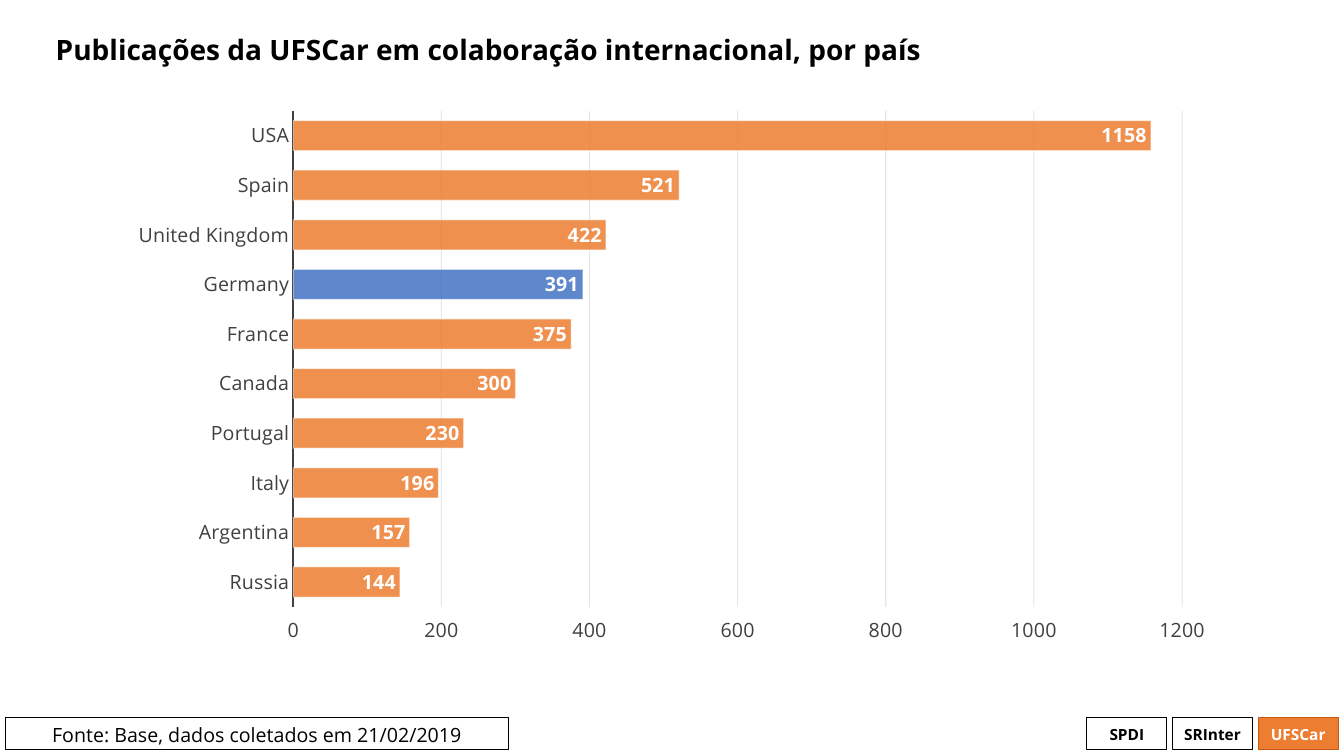
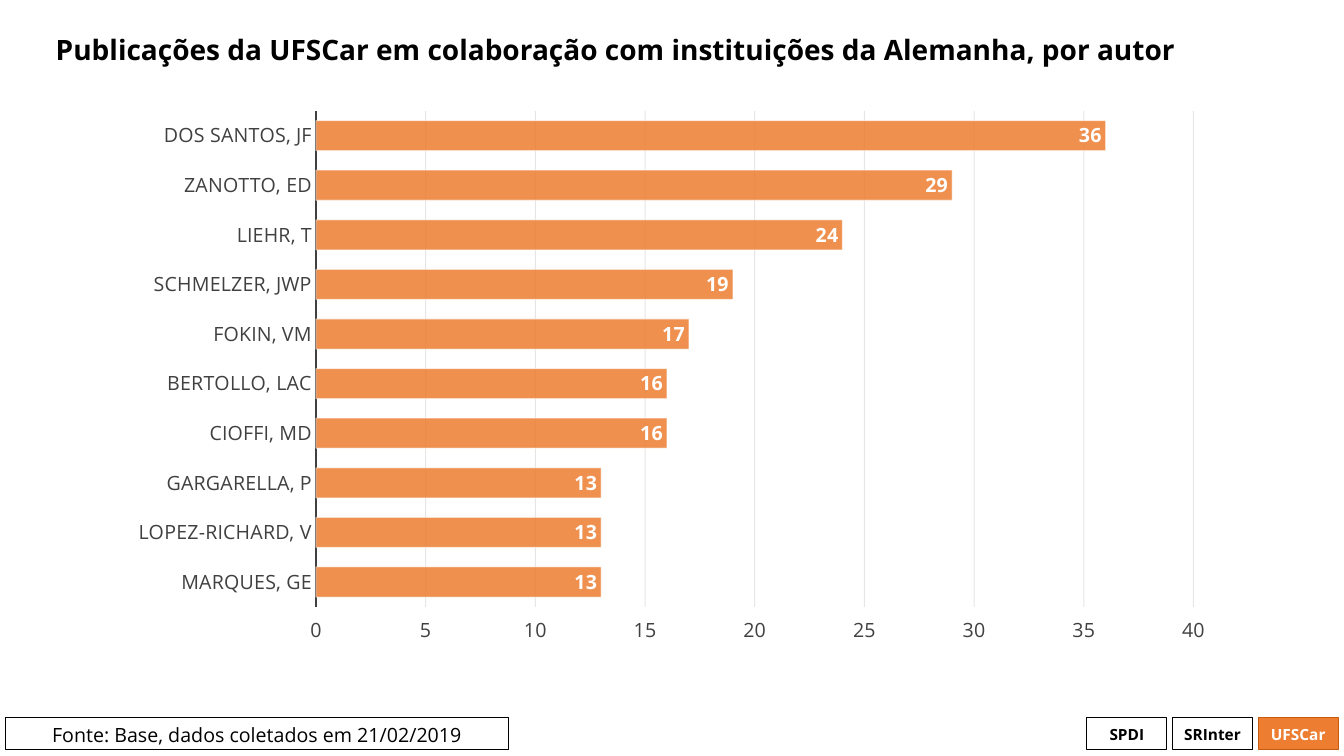
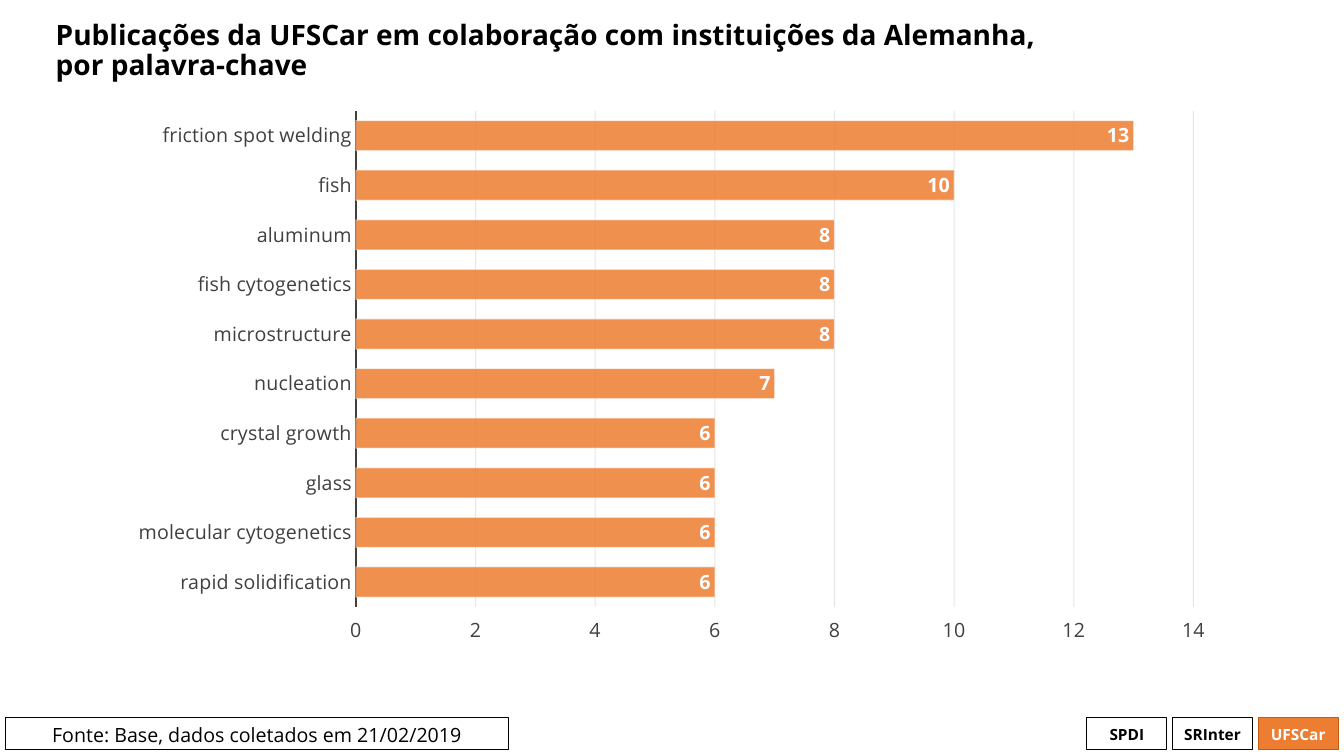
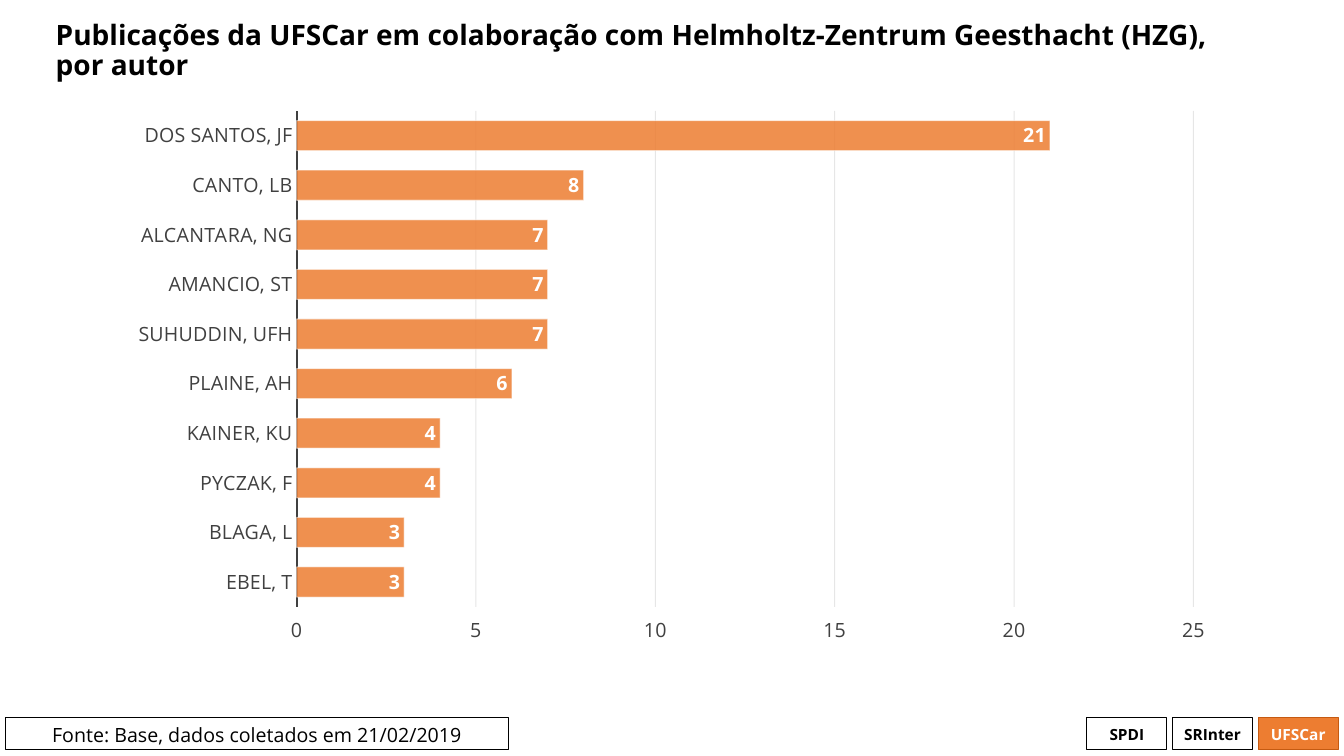
"""Build four bar-chart slides on international co-authorship."""
from dataclasses import dataclass
from typing import Optional

from lxml.etree import SubElement
from pptx import Presentation
from pptx.chart.data import CategoryChartData
from pptx.dml.color import RGBColor
from pptx.dml.chtfmt import ChartFormat
from pptx.enum.chart import XL_CHART_TYPE as ChartType, XL_LABEL_POSITION as LabelPos
from pptx.enum.chart import XL_TICK_LABEL_POSITION as TickLabelPos, XL_TICK_MARK as Tick
from pptx.enum.shapes import MSO_SHAPE as Shape
from pptx.enum.text import MSO_ANCHOR as Anchor, PP_ALIGN as Align
from pptx.oxml.ns import qn
from pptx.slide import Slide
from pptx.text.text import Font, TextFrame
from pptx.util import Inches, Pt

FONT = "Open Sans"
COLORS = {
    "black": "000000", "white": "FFFFFF", "gray": "404040", "grid": "0D0D0D",
    "orange": "ED7D31", "rust": "C55A11", "blue": "4472C4",
}
COLS, ROWS = 160, 90
UNIT = Inches(7.5) / ROWS
FOOTER_TOP, FOOTER_HEIGHT = 85.44, 3.84
BADGE_LEFT, BADGE_WIDTH, BADGE_STEP = 129.4, 9.5, 10.2


@dataclass(frozen=True)
class Area:
    """A rectangle in grid columns and rows."""
    left: float
    top: float
    width: float
    height: float

    def emu(self) -> tuple[int, ...]:
        """Return the rectangle in slide units."""
        return tuple(round(v * UNIT) for v in (self.left, self.top, self.width, self.height))


@dataclass(frozen=True)
class Box:
    """A framed footer label."""
    text: str
    area: Area
    size: float = 11
    bold: bool = True
    anchor: Anchor = Anchor.MIDDLE
    fill: Optional[str] = None
    line: str = "black"
    color: str = "black"


@dataclass(frozen=True)
class Ranking:
    """A title with its ranked values."""
    title: str
    values: dict[str, int]
    maximum: Optional[int] = None
    highlight: Optional[str] = None


def badge_area(i: int) -> Area:
    """Return the place of a badge in the footer row."""
    return Area(BADGE_LEFT + i * BADGE_STEP, FOOTER_TOP, BADGE_WIDTH, FOOTER_HEIGHT)


TITLE_AREA = Area(5.45, 0.7, 148.9, 10.9)
CHART_AREA = Area(13.85, 11.88, 132.24, 66.12)
FOOTER = [
    Box("SPDI", badge_area(0)),
    Box("SRInter", badge_area(1)),
    Box("UFSCar", badge_area(2), fill="orange", line="rust", color="white"),
    Box("Fonte: Base, dados coletados em 21/02/2019",
        Area(0.66, FOOTER_TOP, 59.88, FOOTER_HEIGHT), 14, False, Anchor.TOP),
]

RANKINGS = [
    Ranking("Publicações da UFSCar em colaboração internacional, por país", {
        "USA": 1158, "Spain": 521, "United Kingdom": 422, "Germany": 391, "France": 375,
        "Canada": 300, "Portugal": 230, "Italy": 196, "Argentina": 157, "Russia": 144,
    }, maximum=1200, highlight="Germany"),
    Ranking("Publicações da UFSCar em colaboração com instituições da Alemanha, por autor", {
        "DOS SANTOS, JF": 36, "ZANOTTO, ED": 29, "LIEHR, T": 24, "SCHMELZER, JWP": 19,
        "FOKIN, VM": 17, "BERTOLLO, LAC": 16, "CIOFFI, MD": 16, "GARGARELLA, P": 13,
        "LOPEZ-RICHARD, V": 13, "MARQUES, GE": 13,
    }),
    Ranking("Publicações da UFSCar em colaboração com instituições da Alemanha,\n"
            "por palavra-chave", {
        "friction spot welding": 13, "fish": 10, "aluminum": 8, "fish cytogenetics": 8,
        "microstructure": 8, "nucleation": 7, "crystal growth": 6, "glass": 6,
        "molecular cytogenetics": 6, "rapid solidification": 6,
    }),
    Ranking("Publicações da UFSCar em colaboração com Helmholtz-Zentrum Geesthacht (HZG),\n"
            "por autor", {
        "DOS SANTOS, JF": 21, "CANTO, LB": 8, "ALCANTARA, NG": 7, "AMANCIO, ST": 7,
        "SUHUDDIN, UFH": 7, "PLAINE, AH": 6, "KAINER, KU": 4, "PYCZAK, F": 4,
        "BLAGA, L": 3, "EBEL, T": 3,
    }),
]


def rgb(name: str) -> RGBColor:
    """Return a named colour."""
    return RGBColor.from_string(COLORS[name])


def style_font(font: Font, size: float, color: str, bold: bool = False) -> None:
    """Set the face, size and colour of a font."""
    font.name, font.size, font.bold = FONT, Pt(size), bold
    font.color.rgb = rgb(color)


def set_text(tf: TextFrame, text: str, size: float, color: str, bold: bool,
             align: Align, anchor: Anchor) -> None:
    """Write one formatted paragraph."""
    tf.word_wrap = True
    tf.vertical_anchor = anchor
    p = tf.paragraphs[0]
    p.text = text
    p.alignment = align
    for r in p.runs:
        style_font(r.font, size, color, bold)


def style_line(fmt: ChartFormat, color: str, width: float, opacity: int = 100) -> None:
    """Draw a chart line with the given opacity in percent."""
    fmt.line.color.rgb = rgb(color)
    fmt.line.width = Pt(width)
    set_opacity(fmt, opacity, "a:ln", "a:solidFill", "a:srgbClr")


def set_opacity(fmt: ChartFormat, opacity: int, *tags: str) -> None:
    """Set the opacity of the colour found under the given tags."""
    color = fmt._element.find("/".join(qn(t) for t in ("c:spPr", *tags)))
    SubElement(color, qn("a:alpha")).set("val", str(opacity * 1000))


def style_bar(fmt: ChartFormat, color: str) -> None:
    """Give a bar its translucent fill and outline."""
    fmt.fill.solid()
    fmt.fill.fore_color.rgb = rgb(color)
    set_opacity(fmt, 85, "a:solidFill", "a:srgbClr")
    style_line(fmt, "white", 0.75, 50)


def add_box(s: Slide, box: Box) -> None:
    """Draw a footer label."""
    sp = s.shapes.add_shape(Shape.RECTANGLE, *box.area.emu())
    sp.shadow.inherit = False
    if box.fill:
        sp.fill.solid()
        sp.fill.fore_color.rgb = rgb(box.fill)
    else:
        sp.fill.background()
    sp.line.color.rgb = rgb(box.line)
    sp.line.width = Pt(0.75)
    set_text(sp.text_frame, box.text, box.size, box.color, box.bold, Align.CENTER, box.anchor)


def add_title(s: Slide, title: str) -> None:
    """Write the slide title."""
    tf = s.shapes.add_textbox(*TITLE_AREA.emu()).text_frame
    set_text(tf, title, 20, "black", True, Align.LEFT, Anchor.MIDDLE)
    tf.paragraphs[0].line_spacing = 0.9


def add_ranking(s: Slide, ranking: Ranking) -> None:
    """Draw the ranking as a bar chart."""
    data = CategoryChartData()
    data.categories = list(ranking.values)
    data.add_series("Series 1", list(ranking.values.values()))
    chart = s.shapes.add_chart(ChartType.BAR_CLUSTERED, *CHART_AREA.emu(), data).chart
    chart.has_title = chart.has_legend = False
    style_font(chart.font, 14, "black")

    cat, val = chart.category_axis, chart.value_axis
    for axis in (cat, val):
        axis.major_tick_mark = axis.minor_tick_mark = Tick.NONE
        style_font(axis.tick_labels.font, 14, "gray")
    cat.reverse_order = True
    style_line(cat.format, "gray", 1.5)
    val.tick_label_position = TickLabelPos.HIGH
    val.minimum_scale = 0
    val.maximum_scale = ranking.maximum
    val.format.line.fill.background()
    val.has_major_gridlines = True
    style_line(val.major_gridlines.format, "grid", 0.75, 10)

    plot = chart.plots[0]
    plot.gap_width = 65
    plot.vary_by_categories = False
    series = plot.series[0]
    series.invert_if_negative = False
    style_bar(series.format, "orange")
    if ranking.highlight:
        i = list(ranking.values).index(ranking.highlight)
        style_bar(series.points[i].format, "blue")
    labels = series.data_labels
    labels.show_value = True
    labels.position = LabelPos.INSIDE_END
    style_font(labels.font, 14, "white", True)


def main() -> None:
    """Build and save the presentation."""
    prs = Presentation()
    prs.slide_width, prs.slide_height = round(COLS * UNIT), round(ROWS * UNIT)
    for ranking in RANKINGS:
        s = prs.slides.add_slide(prs.slide_layouts[6])
        for box in FOOTER:
            add_box(s, box)
        add_title(s, ranking.title)
        add_ranking(s, ranking)
    prs.save("out.pptx")


if __name__ == "__main__":
    main()
